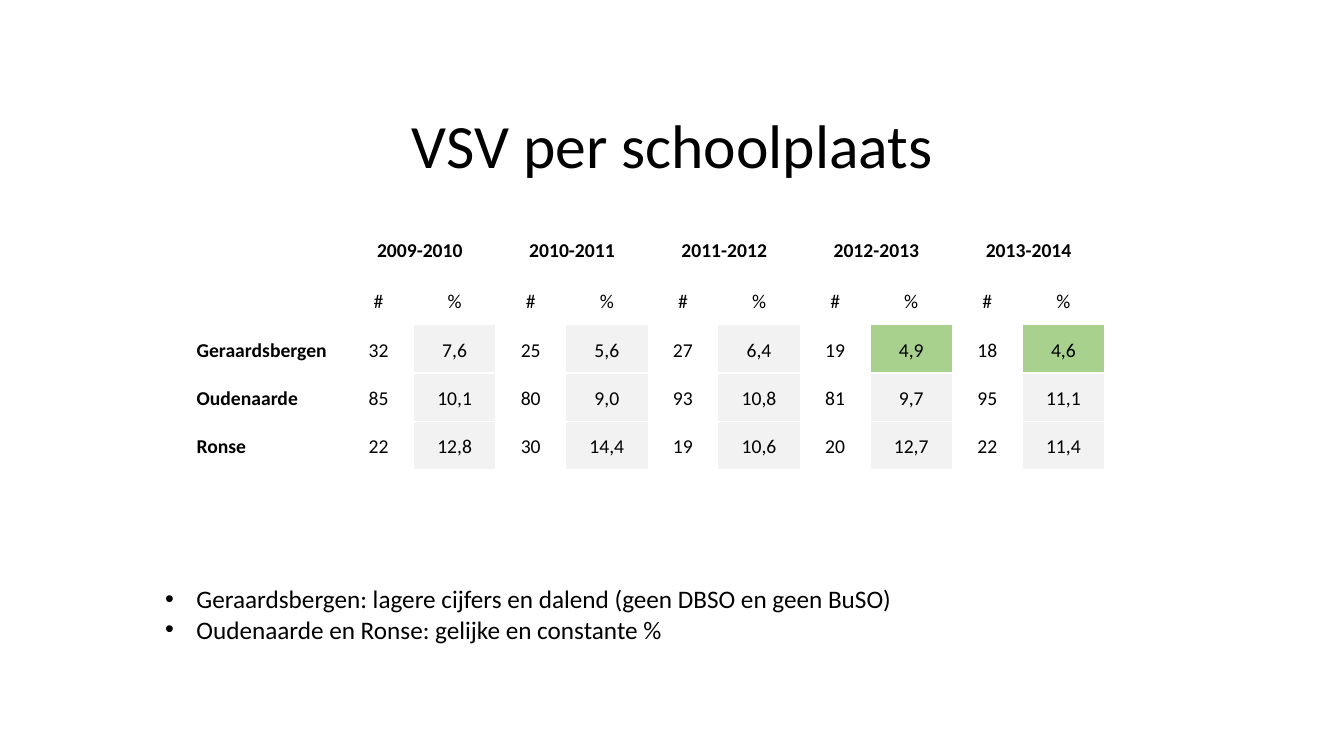
from dataclasses import dataclass

from lxml.etree import SubElement
from pptx import Presentation
from pptx.dml.color import RGBColor
from pptx.enum.text import MSO_ANCHOR, PP_ALIGN
from pptx.oxml.ns import qn
from pptx.util import Inches, Pt

TITLE = "VSV per schoolplaats"
YEARS = ["2009-2010", "2010-2011", "2011-2012", "2012-2013", "2013-2014"]
MEASURES = ["#", "%"]
TOWNS = {
    "Geraardsbergen": ["32", "7,6", "25", "5,6", "27", "6,4", "19", "4,9", "18", "4,6"],
    "Oudenaarde": ["85", "10,1", "80", "9,0", "93", "10,8", "81", "9,7", "95", "11,1"],
    "Ronse": ["22", "12,8", "30", "14,4", "19", "10,6", "20", "12,7", "22", "11,4"],
}
LOW_RATES = {"4,9", "4,6"}
FINDINGS = [
    "Geraardsbergen: lagere cijfers en dalend (geen DBSO en geen BuSO)",
    "Oudenaarde en Ronse: gelijke en constante %",
]


@dataclass(frozen=True)
class Theme:
    font: str = "Calibri"
    ink: str = "000000"
    paper: str = "FFFFFF"
    rate: str = "F2F2F2"
    low: str = "A9D18E"
    title_size: int = 44
    finding_size: int = 18
    table_size: int = 14


THEME = Theme()
SLIDE_SIZE = (13.33, 7.5)
TITLE_BOX = (0.92, 0.4, 11.5, 1.45)
FINDINGS_BOX = (1.54, 5.43, 7.5, 1.01)
TABLE_CORNER = (1.9, 2.2)
TOWN_WIDTH, MEASURE_WIDTHS = 1.51, [0.69, 0.82]
HEADER_HEIGHT, ROW_HEIGHT = 0.54, 0.48
BULLET_INDENT = 0.31
CELL_FORMAT = {
    "margin_left": Inches(0.05),
    "margin_right": Inches(0.05),
    "margin_top": 0,
    "margin_bottom": 0,
    "vertical_anchor": MSO_ANCHOR.MIDDLE,
}


def apply_format(target, values):
    for name, value in values.items():
        setattr(target, name, value)


def write(paragraph, text, size, bold=False, align=PP_ALIGN.LEFT, spacing=1.0):
    apply_format(paragraph, {"alignment": align, "line_spacing": spacing})
    run = paragraph.add_run()
    run.text = text
    apply_format(run.font, {"name": THEME.font, "size": Pt(size), "bold": bold})
    run.font.color.rgb = RGBColor.from_string(THEME.ink)


def add_text_frame(slide, box):
    frame = slide.shapes.add_textbox(*map(Inches, box)).text_frame
    apply_format(frame, {"word_wrap": True, "vertical_anchor": MSO_ANCHOR.BOTTOM})
    return frame


def add_bullet(paragraph):
    properties = paragraph._p.get_or_add_pPr()
    indent = Inches(BULLET_INDENT)
    properties.set("marL", str(indent))
    properties.set("indent", str(-indent))
    SubElement(properties, qn("a:buFont"), typeface="Arial")
    SubElement(properties, qn("a:buChar"), char="•")


def add_borders(cell, bottom_width):
    properties = cell._tc.get_or_add_tcPr()
    for side, width in {"L": 1, "R": 1, "T": 1, "B": bottom_width}.items():
        line = SubElement(properties, qn(f"a:ln{side}"), w=str(Pt(width)))
        fill = SubElement(line, qn("a:solidFill"))
        SubElement(fill, qn("a:srgbClr"), val=THEME.paper)


def cell_colour(row, column, text):
    if row < 2 or column == 0 or column % 2:
        return THEME.paper
    return THEME.low if text in LOW_RATES else THEME.rate


def add_rates_table(slide):
    grid = [
        [""] + [text for year in YEARS for text in (year, "")],
        [""] + MEASURES * len(YEARS),
        *([town, *figures] for town, figures in TOWNS.items()),
    ]
    widths = [TOWN_WIDTH] + MEASURE_WIDTHS * len(YEARS)
    heights = [HEADER_HEIGHT] + [ROW_HEIGHT] * (len(grid) - 1)
    extent = (sum(widths), sum(heights))
    table = slide.shapes.add_table(
        len(grid), len(widths), *map(Inches, TABLE_CORNER + extent)
    ).table
    apply_format(table, {"first_row": False, "horz_banding": False})
    for column, width in zip(table.columns, widths):
        column.width = Inches(width)
    for row, height in zip(table.rows, heights):
        row.height = Inches(height)

    for r, texts in enumerate(grid):
        for c, text in enumerate(texts):
            cell = table.cell(r, c)
            apply_format(cell, CELL_FORMAT)
            add_borders(cell, bottom_width=3 if r == 0 else 1)
            cell.fill.solid()
            cell.fill.fore_color.rgb = RGBColor.from_string(cell_colour(r, c, text))
            if text:
                write(
                    cell.text_frame.paragraphs[0],
                    text,
                    THEME.table_size,
                    bold=r == 0 or c == 0,
                    align=PP_ALIGN.CENTER if c else PP_ALIGN.LEFT,
                    spacing=1.15,
                )
    for c in range(1, len(widths), len(MEASURES)):
        table.cell(0, c).merge(table.cell(0, c + 1))


def main():
    deck = Presentation()
    deck.slide_width, deck.slide_height = map(Inches, SLIDE_SIZE)
    slide = deck.slides.add_slide(deck.slide_layouts[6])

    heading = add_text_frame(slide, TITLE_BOX).paragraphs[0]
    write(heading, TITLE, THEME.title_size, align=PP_ALIGN.CENTER, spacing=0.9)

    add_rates_table(slide)

    findings = add_text_frame(slide, FINDINGS_BOX)
    for i, finding in enumerate(FINDINGS):
        paragraph = findings.add_paragraph() if i else findings.paragraphs[0]
        write(paragraph, finding, THEME.finding_size)
        add_bullet(paragraph)

    deck.save("out.pptx")


if __name__ == "__main__":
    main()
